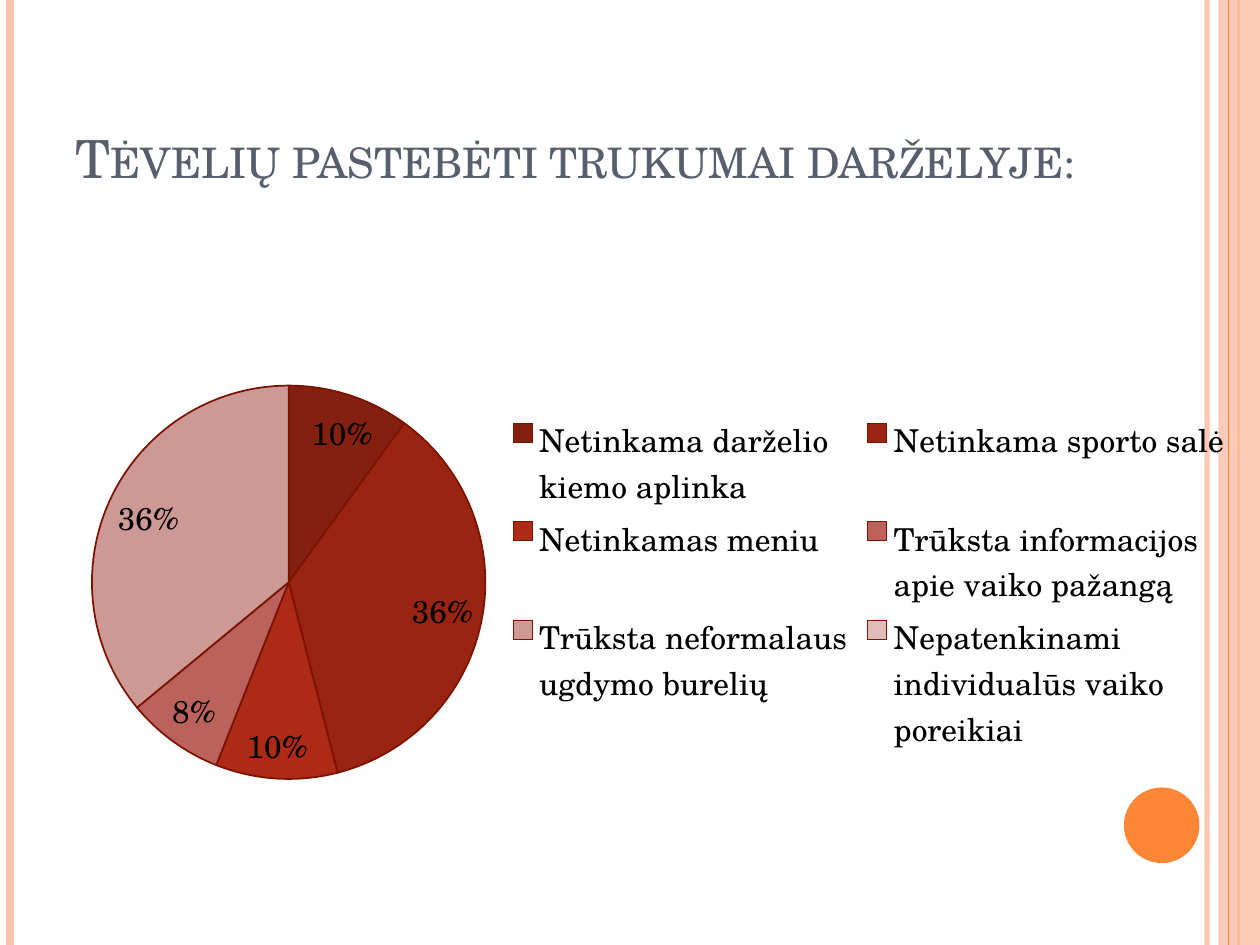
from dataclasses import dataclass

from lxml import etree
from pptx import Presentation
from pptx import util as u
from pptx.chart.data import CategoryChartData
from pptx.dml.color import RGBColor
from pptx.enum import chart as ch, shapes, text
from pptx.oxml.ns import qn


@dataclass(frozen=True)
class Theme:
    """Colours, fonts and type sizes of the slide."""
    font: str = "TeX Gyre Schola"
    title_size: int = 30
    chart_size: int = 18
    title: str = "575F6D"
    ink: str = "000000"
    accent: str = "FE8637"
    pale: str = "FEC3AE"
    slice_line: str = "7A1300"
    slices: tuple = ("832010", "9A2412", "AC2A16", "BC625C", "CD9994", "E0BDBA")


class Deck:
    """Holds the theme and the current slide, and adds elements to it."""

    def __init__(self, theme):
        self.theme = theme
        self.prs = Presentation()
        self.prs.slide_width, self.prs.slide_height = u.Inches(10), u.Inches(7.5)
        self.s = self.prs.slides.add_slide(self.prs.slide_layouts[5])

    def style_font(self, font, size, color):
        """Apply the theme font with a size and colour."""
        font.name, font.size = self.theme.font, u.Pt(size)
        font.color.rgb = RGBColor.from_string(color)

    def set_alpha(self, sp, percent):
        """Make the first solid colour of a shape partly transparent."""
        color = next(sp._element.spPr.iter(qn("a:srgbClr")))
        etree.SubElement(color, qn("a:alpha")).set("val", str(percent * 1000))

    def rule(self, x, color, width, alpha=100):
        """Add a vertical line over the full slide height."""
        x = u.Inches(x)
        line = self.s.shapes.add_connector(
            shapes.MSO_CONNECTOR.STRAIGHT, x, 0, x, self.prs.slide_height)
        line.line.color.rgb = RGBColor.from_string(color)
        line.line.width = u.Pt(width)
        etree.SubElement(line._element.spPr, qn("a:effectLst"))
        if alpha < 100:
            self.set_alpha(line, alpha)

    def shape(self, kind, box, color, alpha=100):
        """Add a filled preset shape without outline."""
        sp = self.s.shapes.add_shape(kind, *map(u.Inches, box))
        sp.shadow.inherit = False
        sp.fill.solid()
        sp.fill.fore_color.rgb = RGBColor.from_string(color)
        sp.line.fill.background()
        if alpha < 100:
            self.set_alpha(sp, alpha)

    def title(self, wording, box):
        """Fill and place the title placeholder in small capitals."""
        sp = self.s.shapes.title
        sp.left, sp.top, sp.width, sp.height = map(u.Inches, box)
        tf = sp.text_frame
        tf.text = wording
        tf.word_wrap = True
        tf.vertical_anchor = text.MSO_ANCHOR.BOTTOM
        p = tf.paragraphs[0]
        p.alignment = text.PP_ALIGN.LEFT
        self.style_font(p.font, self.theme.title_size, self.theme.title)
        p.runs[0]._r.get_or_add_rPr().set("cap", "small")

    def pie(self, name, values, box):
        """Add a pie chart with percent labels and a legend."""
        data = CategoryChartData()
        data.categories = list(values)
        data.add_series(name, list(values.values()))
        chart = self.s.shapes.add_chart(
            ch.XL_CHART_TYPE.PIE, *map(u.Inches, box), data).chart
        chart.has_title = False
        self.style_font(chart.font, self.theme.chart_size, self.theme.ink)

        plot = chart.plots[0]
        plot.vary_by_categories = True
        for i, color in enumerate(self.theme.slices):
            fmt = plot.series[0].points[i].format
            fmt.fill.solid()
            fmt.fill.fore_color.rgb = RGBColor.from_string(color)
            fmt.line.color.rgb = RGBColor.from_string(self.theme.slice_line)
            fmt.line.width = u.Pt(1)

        plot.has_data_labels = True
        labels = plot.data_labels
        labels.show_percentage, labels.show_value = True, False
        labels.number_format, labels.number_format_is_linked = "0%", False
        labels.position = ch.XL_LABEL_POSITION.BEST_FIT
        self.style_font(labels.font, self.theme.chart_size, self.theme.ink)

        chart.has_legend = True
        legend = chart.legend
        legend.position = ch.XL_LEGEND_POSITION.RIGHT
        legend.include_in_layout = False
        self.style_font(legend.font, self.theme.chart_size, self.theme.ink)


def main():
    theme = Theme()
    deck = Deck(theme)
    deck.rule(9.58, theme.pale, 3, 93)
    deck.rule(0.08, theme.pale, 4.5)
    deck.rule(9.83, theme.accent, 1.5)
    deck.shape(shapes.MSO_SHAPE.RECTANGLE, (9.67, 0, 0.33, 7.5), theme.pale, 87)
    deck.rule(9.75, theme.accent, 0.75)
    deck.shape(shapes.MSO_SHAPE.OVAL, (8.92, 6.25, 0.6, 0.6), theme.accent)
    deck.title("Tėvelių pastebėti trukumai darželyje:", (0.5, 0.3, 8.17, 1.25))
    shortcomings = {
        "Netinkama darželio kiemo aplinka": 10,
        "Netinkama sporto salė": 36,
        "Netinkamas meniu": 10,
        "Trūksta informacijos apie vaiko pažangą": 8,
        "Trūksta neformalaus ugdymo burelių": 36,
        "Nepatenkinami individualūs vaiko poreikiai": None,
    }
    deck.pie("Series 1", shortcomings, (0.51, 1.78, 9.37, 5.72))
    deck.prs.save("out.pptx")


if __name__ == "__main__":
    main()
